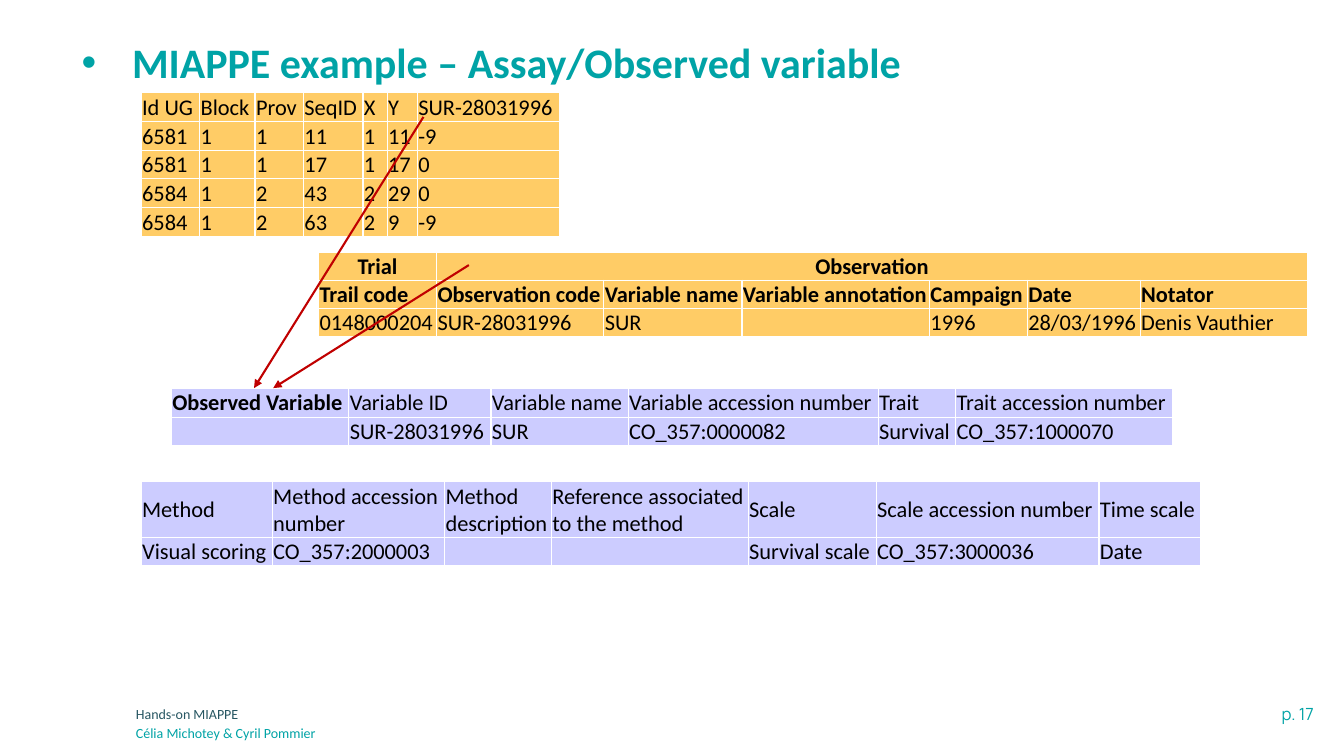
from dataclasses import dataclass
from itertools import product

from lxml.etree import SubElement
from pptx import Presentation
from pptx.dml.color import RGBColor
from pptx.enum.shapes import MSO_CONNECTOR
from pptx.enum.text import MSO_ANCHOR as Anchor, PP_ALIGN as Align
from pptx.oxml.ns import qn
from pptx.slide import Slide
from pptx.table import _Cell as Cell
from pptx.text.text import _Paragraph as Paragraph
from pptx.util import Inches, Pt

TEAL = RGBColor(0x00, 0xA3, 0xA6)
DARK_TEAL = RGBColor(0x27, 0x56, 0x62)
BLACK = RGBColor(0x00, 0x00, 0x00)
RED = RGBColor(0xC0, 0x00, 0x00)
WHITE = RGBColor(0xFF, 0xFF, 0xFF)
ORANGE = RGBColor(0xFF, 0xCC, 0x66)
LAVENDER = RGBColor(0xCC, 0xCC, 0xFF)


@dataclass(frozen=True)
class DataTable:
    left: float
    top: float
    columns: tuple[float, ...]
    row_heights: tuple[float, ...]
    fill: RGBColor
    rows: tuple[tuple[str, ...], ...]
    header_anchor: Anchor = Anchor.BOTTOM
    bold_cells: tuple[tuple[int, int], ...] = ()
    group_row: bool = False  # first row: one cell, then one spanning the rest


@dataclass(frozen=True)
class Arrow:
    start: tuple[float, float]
    end: tuple[float, float]


OBSERVED_VARIABLE = DataTable(
    1.7, 3.85, (1.76, 1.41, 1.36, 2.48, 0.77, 2.15), (0.29, 0.28), LAVENDER,
    (
        ("Observed Variable", "Variable ID", "Variable name",
         "Variable accession number", "Trait", "Trait accession number"),
        ("", "SUR-28031996", "SUR", "CO_357:0000082", "Survival", "CO_357:1000070"),
    ),
    header_anchor=Anchor.MIDDLE, bold_cells=((0, 0),),
)
FIELD_DATA = DataTable(
    1.4, 0.92, (0.58, 0.55, 0.48, 0.59, 0.24, 0.3, 1.41), (0.285,) * 5, ORANGE,
    (
        ("Id UG", "Block", "Prov", "SeqID", "X", "Y", "SUR-28031996"),
        ("6581", "1", "1", "11", "1", "11", "-9"),
        ("6581", "1", "1", "17", "1", "17", "0"),
        ("6584", "1", "2", "43", "2", "29", "0"),
        ("6584", "1", "2", "63", "2", "9", "-9"),
    ),
)
METHOD = DataTable(
    1.4, 4.78, (1.3, 1.71, 1.06, 1.95, 1.27, 2.21, 1.01), (0.55, 0.28), LAVENDER,
    (
        ("Method", "Method accession number", "Method description",
         "Reference associated to the method", "Scale",
         "Scale accession number", "Time scale"),
        ("Visual scoring", "CO_357:2000003", "", "", "Survival scale",
         "CO_357:3000036", "Date"),
    ),
    header_anchor=Anchor.MIDDLE,
)
OBSERVATION = DataTable(
    3.16, 2.5, (1.17, 1.66, 1.37, 1.86, 0.97, 1.12, 1.66), (0.28,) * 3, ORANGE,
    (
        ("Trial", "Observation"),
        ("Trail code", "Observation code", "Variable name", "Variable annotation",
         "Campaign", "Date", "Notator"),
        ("0148000204", "SUR-28031996", "SUR", "", "1996", "28/03/1996",
         "Denis Vauthier"),
    ),
    bold_cells=tuple(product(range(2), range(7))), group_row=True,
)
ARROWS = (
    Arrow((4.2, 1.16), (2.52, 3.85)),
    Arrow((4.65, 2.63), (2.71, 3.85)),
)


def write(paragraph: Paragraph, text: str, *, size: float, color: RGBColor,
          font: str = "Calibri", bold: bool = False, align: Align = Align.LEFT) -> None:
    paragraph.alignment = align
    run = paragraph.add_run()
    run.text = text
    run.font.name = font
    run.font.size = Pt(size)
    run.font.bold = bold
    run.font.color.rgb = color


def add_text(slide: Slide, left: float, top: float, width: float, height: float,
             text: str, **text_format) -> Paragraph:
    frame = slide.shapes.add_textbox(
        Inches(left), Inches(top), Inches(width), Inches(height)).text_frame
    frame.word_wrap = True
    write(frame.paragraphs[0], text, **text_format)
    return frame.paragraphs[0]


def add_title(slide: Slide) -> None:
    shape_count = len(slide.shapes)
    paragraph = add_text(slide, 0.81, 0.16, 11.76, 0.97,
                         "MIAPPE example – Assay/Observed variable",
                         size=30, color=TEAL, bold=True)
    frame = slide.shapes[shape_count].text_frame
    frame.vertical_anchor = Anchor.MIDDLE
    frame.margin_left = 0
    paragraph.line_spacing = 0.9
    properties = paragraph._p.get_or_add_pPr()
    properties.set("marL", str(Inches(0.5)))
    properties.set("indent", str(-Inches(0.5)))
    SubElement(properties, qn("a:buFont"), typeface="Arial")
    SubElement(properties, qn("a:buChar"), char="•")


def style_cell(cell: Cell, fill: RGBColor, anchor: Anchor) -> None:
    """Give a cell its white borders, narrow margins, fill and anchor."""
    cell.margin_left = cell.margin_right = cell.margin_top = Inches(0.01)
    cell.margin_bottom = 0
    cell.vertical_anchor = anchor
    properties = cell._tc.get_or_add_tcPr()
    for side in ("lnL", "lnR", "lnT", "lnB"):
        border = SubElement(properties, qn(f"a:{side}"), w=str(Pt(1)))
        solid = SubElement(border, qn("a:solidFill"))
        SubElement(solid, qn("a:srgbClr"), val=str(WHITE))
    cell.fill.solid()
    cell.fill.fore_color.rgb = fill


def add_data_table(slide: Slide, data: DataTable) -> None:
    row_count, column_count = len(data.row_heights), len(data.columns)
    table = slide.shapes.add_table(
        row_count, column_count, Inches(data.left), Inches(data.top),
        Inches(sum(data.columns)), Inches(sum(data.row_heights))).table
    table.first_row = table.horz_banding = False
    for column, width in zip(table.columns, data.columns):
        column.width = Inches(width)
    for row, height in zip(table.rows, data.row_heights):
        row.height = Inches(height)
    if data.group_row:
        table.cell(0, 1).merge(table.cell(0, column_count - 1))

    for row, column in product(range(row_count), range(column_count)):
        cell = table.cell(row, column)
        style_cell(cell, data.fill, data.header_anchor if row == 0 else Anchor.BOTTOM)
        paragraph = cell.text_frame.paragraphs[0]
        texts = data.rows[row]
        if column < len(texts) and texts[column]:
            centred = data.group_row and row == 0
            write(paragraph, texts[column], size=16, color=BLACK,
                  bold=(row, column) in data.bold_cells,
                  align=Align.CENTER if centred else Align.LEFT)
        else:
            SubElement(paragraph._p, qn("a:endParaRPr"), sz="1600")


def add_arrow(slide: Slide, arrow: Arrow) -> None:
    points = [Inches(value) for value in (*arrow.start, *arrow.end)]
    connector = slide.shapes.add_connector(MSO_CONNECTOR.STRAIGHT, *points)
    connector.line.color.rgb = RED
    connector.line.width = Pt(1.5)
    SubElement(connector.line._get_or_add_ln(), qn("a:tailEnd"), type="triangle")
    SubElement(connector._element.spPr, qn("a:effectLst"))


def main() -> None:
    presentation = Presentation()
    presentation.slide_width = Inches(13.33)
    presentation.slide_height = Inches(7.5)
    slide = presentation.slides.add_slide(presentation.slide_layouts[6])

    add_text(slide, 10.85, 6.93, 2.28, 0.3, "p. 17",
             size=12, color=TEAL, font="Manrope", align=Align.RIGHT)
    add_text(slide, 1.25, 6.95, 7.34, 0.28, "Hands-on MIAPPE", size=10, color=DARK_TEAL)
    add_text(slide, 1.25, 7.14, 7.34, 0.28, "Célia Michotey & Cyril Pommier",
             size=10, color=TEAL)
    add_title(slide)
    for data in (OBSERVED_VARIABLE, FIELD_DATA, METHOD, OBSERVATION):
        add_data_table(slide, data)
    for arrow in ARROWS:
        add_arrow(slide, arrow)
    presentation.save("out.pptx")


if __name__ == "__main__":
    main()
